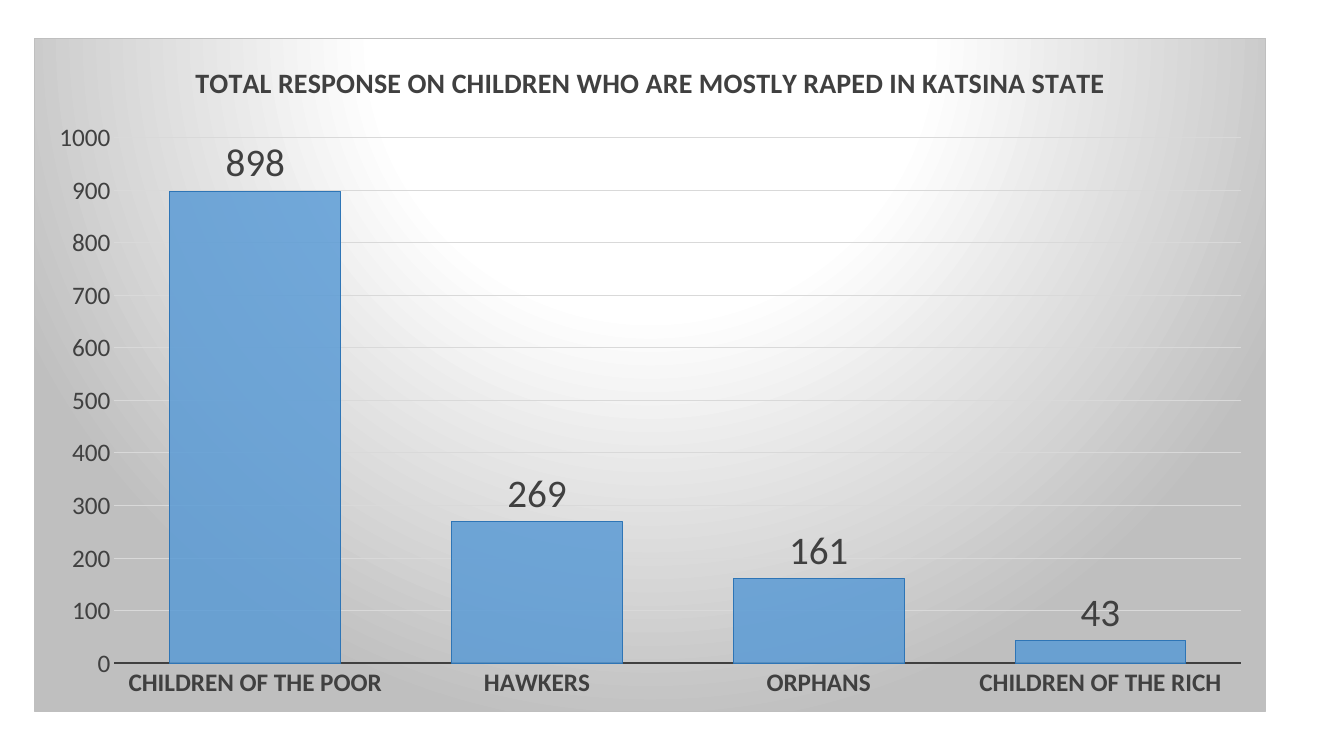
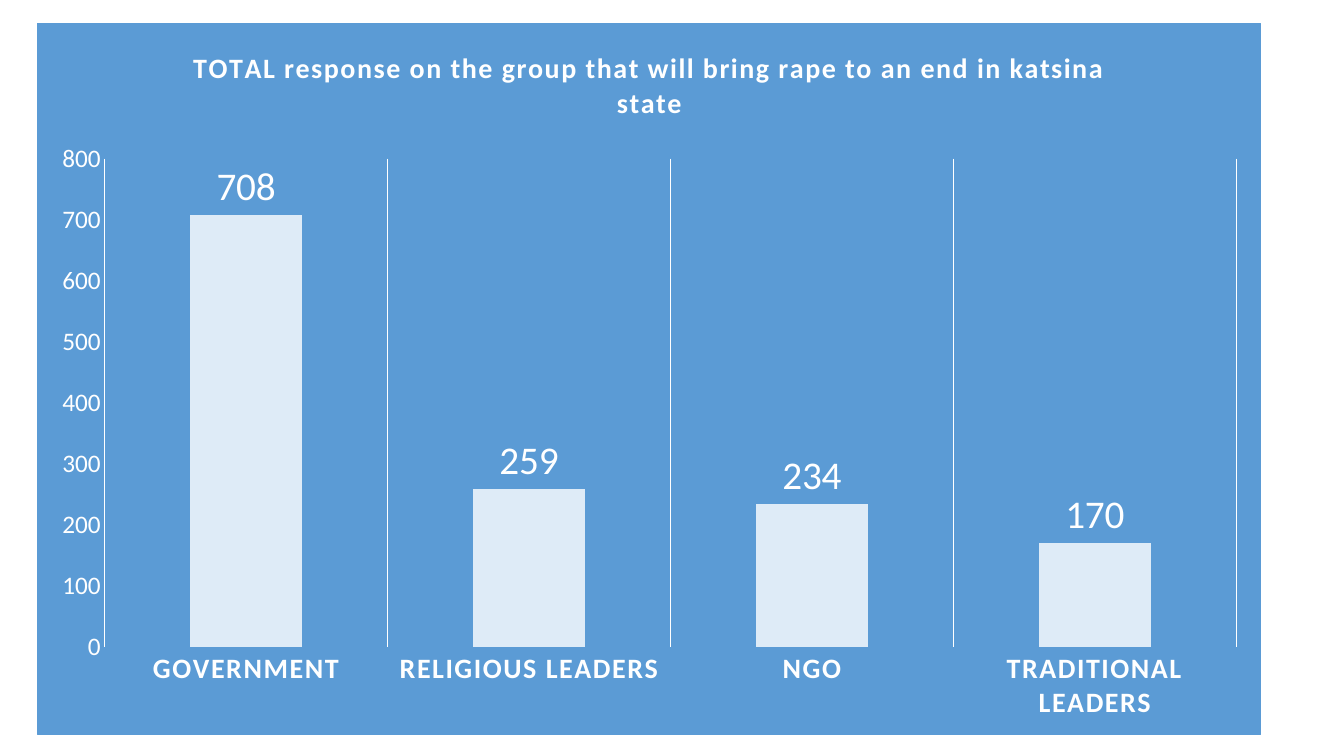
from lxml import etree
from pptx import Presentation
from pptx.chart.data import CategoryChartData
from pptx.dml.color import RGBColor
from pptx.enum.chart import XL_CHART_TYPE, XL_LABEL_POSITION, XL_TICK_MARK
from pptx.oxml import parse_xml
from pptx.oxml.ns import nsdecls, qn
from pptx.util import Inches, Pt

COLUMNS = XL_CHART_TYPE.COLUMN_CLUSTERED
OUTSIDE_END = XL_LABEL_POSITION.OUTSIDE_END
NO_TICK = XL_TICK_MARK.NONE
BLANK_LAYOUT = 6

FONT = "Calibri"
TITLE_SIZE, VALUE_SIZE, LABEL_SIZE = 20, 18, 28
HAIRLINE = 0.75

# Content: one survey question per slide
SURVEYS = [
    {
        "title": "TOTAL RESPONSE ON CHILDREN WHO ARE MOSTLY RAPED IN KATSINA STATE",
        "responses": {"CHILDREN OF THE POOR": 898, "HAWKERS": 269,
                      "ORPHANS": 161, "CHILDREN OF THE RICH": 43},
        "place": (0.34, 0.38, 12.22, 6.68),
        "scale": {"minimum_scale": 0, "maximum_scale": 1000, "major_unit": 100},
        "text": "404040", "category_size": 18, "spacing": 0, "gap": 65,
        "column": "5B9BD5", "opacity": 85, "column_line": "2E75B6",
        "base_line": "404040", "grid_axis": "value_axis", "grid": "D9D9D9",
        "panel": [(0, "FFFFFF"), (39, "FFFFFF"), (100, "BFBFBF")],
        "border": "BFBFBF",
    },
    {
        "title": "TOTAL response on the group that will bring rape to an end in katsina state",
        "responses": {"GOVERNMENT": 708, "RELIGIOUS LEADERS": 259,
                      "NGO": 234, "TRADITIONAL LEADERS": 170},
        "place": (0.37, 0.23, 12.14, 7.06),
        "scale": {"minimum_scale": 0, "maximum_scale": 800, "major_unit": 100},
        "text": "FFFFFF", "category_size": 20, "spacing": 1, "gap": 154,
        "column": "DEEBF7", "opacity": 100, "column_line": None,
        "base_line": None, "grid_axis": "category_axis", "grid": "FFFFFF",
        "panel": [(0, "5B9BD5")],
        "border": "5B9BD5",
    },
]


def rgb(value):
    return RGBColor.from_string(value)


def set_attributes(target, values):
    for name, value in values.items():
        setattr(target, name, value)


def style_font(font, size, color, bold=False):
    set_attributes(font, {"name": FONT, "size": Pt(size), "bold": bold})
    font.color.rgb = rgb(color)


def style_line(line, color, width=HAIRLINE):
    if color is None:
        line.fill.background()
    else:
        line.color.rgb = rgb(color)
        line.width = Pt(width)


def style_title(chart, survey):
    chart.has_title = True
    frame = chart.chart_title.text_frame
    frame.text = survey["title"]
    style_font(frame.paragraphs[0].runs[0].font, TITLE_SIZE, survey["text"], True)


def style_axes(chart, survey):
    categories, values = chart.category_axis, chart.value_axis
    for axis, size, bold, line in (
            (categories, survey["category_size"], True, survey["base_line"]),
            (values, VALUE_SIZE, False, None)):
        set_attributes(axis, {"major_tick_mark": NO_TICK, "minor_tick_mark": NO_TICK,
                              "has_major_gridlines": False})
        style_font(axis.tick_labels.font, size, survey["text"], bold)
        style_line(axis.format.line, line, 1.5)
    set_attributes(values, survey["scale"])
    grid_axis = getattr(chart, survey["grid_axis"])
    grid_axis.has_major_gridlines = True
    style_line(grid_axis.major_gridlines.format.line, survey["grid"])


def style_columns(chart, survey):
    plot = chart.plots[0]
    set_attributes(plot, {"gap_width": survey["gap"], "vary_by_categories": False,
                          "has_data_labels": True})
    set_attributes(plot.data_labels, {"show_value": True, "position": OUTSIDE_END})
    style_font(plot.data_labels.font, LABEL_SIZE, survey["text"])
    columns = plot.series[0]
    columns.invert_if_negative = False
    columns.format.fill.solid()
    columns.format.fill.fore_color.rgb = rgb(survey["column"])
    style_line(columns.format.line, survey["column_line"])
    if survey["opacity"] < 100:
        for color in columns.format.fill.fore_color and chart.element.xpath(
                ".//c:ser/c:spPr/a:solidFill/a:srgbClr"):
            etree.SubElement(color, qn("a:alpha"), val=str(survey["opacity"] * 1000))


def panel_fill(stops):
    """Solid fill for one stop, otherwise a circular gradient centred above the panel."""
    if len(stops) == 1:
        return f'<a:solidFill><a:srgbClr val="{stops[0][1]}"/></a:solidFill>'
    marks = "".join(f'<a:gs pos="{position * 1000}"><a:srgbClr val="{color}"/></a:gs>'
                    for position, color in stops)
    return (f'<a:gradFill><a:gsLst>{marks}</a:gsLst><a:path path="circle">'
            '<a:fillToRect l="50000" t="-80000" r="50000" b="180000"/>'
            '</a:path></a:gradFill>')


def style_panel(chart, survey):
    panel = parse_xml(
        f'<c:spPr {nsdecls("c", "a")}>{panel_fill(survey["panel"])}'
        f'<a:ln w="{Pt(HAIRLINE)}"><a:solidFill><a:srgbClr val="{survey["border"]}"/>'
        '</a:solidFill></a:ln></c:spPr>')
    chart.element.find(qn("c:chart")).addnext(panel)


def space_letters(chart, points):
    for text in chart.element.xpath(".//c:title//a:rPr | .//c:catAx//a:defRPr"):
        text.set("spc", str(points * 100))


def add_survey(slide, survey):
    data = CategoryChartData()
    data.categories = list(survey["responses"])
    data.add_series("Series 1", list(survey["responses"].values()))
    place = [Inches(length) for length in survey["place"]]
    chart = slide.shapes.add_chart(COLUMNS, *place, data).chart
    chart.has_legend = False
    style_font(chart.font, 10, "000000")
    for style in (style_title, style_axes, style_columns, style_panel):
        style(chart, survey)
    space_letters(chart, survey["spacing"])


def main():
    deck = Presentation()
    set_attributes(deck, {"slide_width": Inches(13.33), "slide_height": Inches(7.5)})
    for survey in SURVEYS:
        add_survey(deck.slides.add_slide(deck.slide_layouts[BLANK_LAYOUT]), survey)
    deck.save("out.pptx")


if __name__ == "__main__":
    main()
